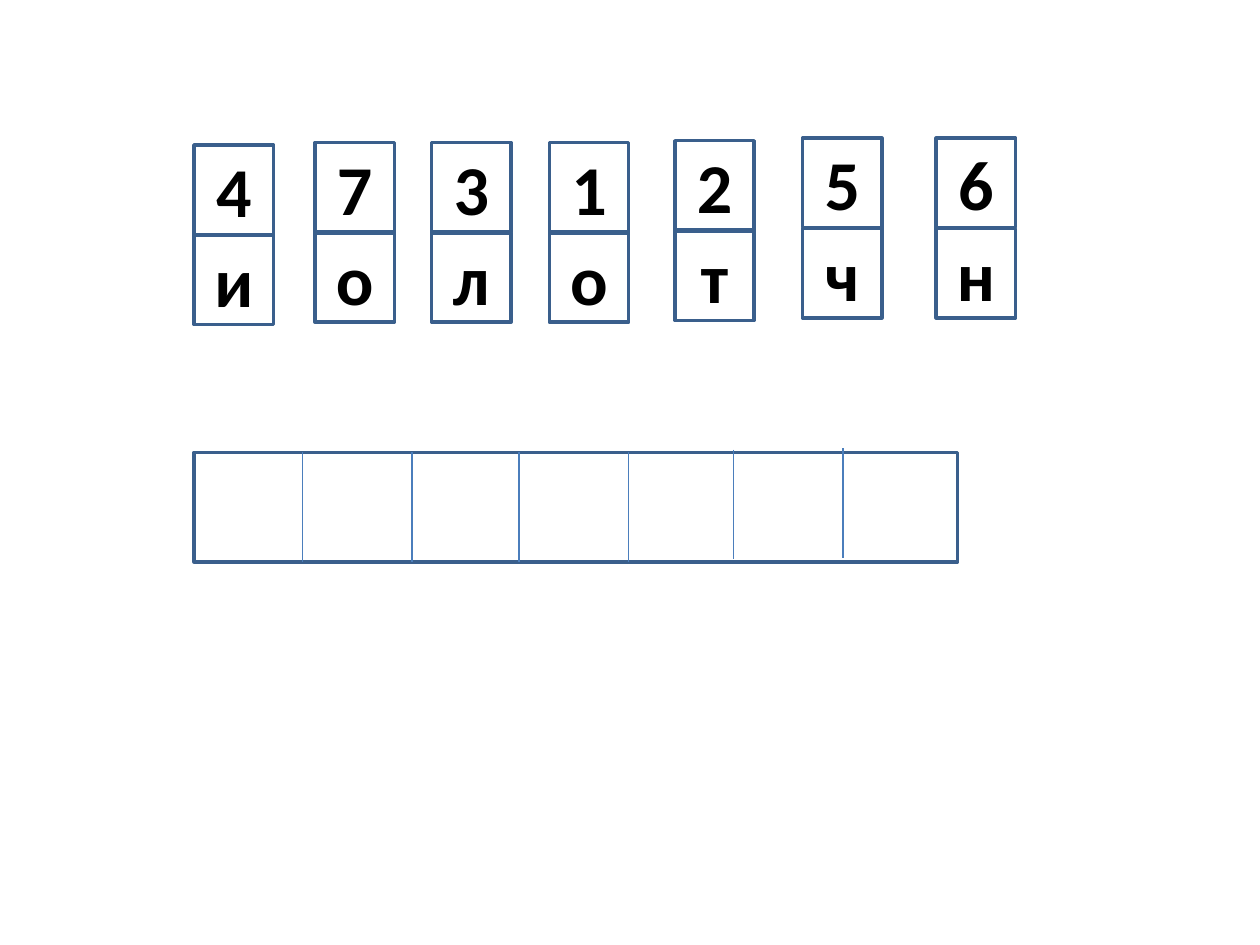
from lxml import etree
from pptx import Presentation, util as u
from pptx.dml.color import RGBColor
from pptx.enum import shapes, text
from pptx.oxml import ns

WHITE = RGBColor(0xFF, 0xFF, 0xFF)
BLACK = RGBColor(0, 0, 0)
NAVY = RGBColor(0x3A, 0x5F, 0x8C)
BLUE = RGBColor(0x4B, 0x7E, 0xBC)

TILE_WIDTH, TILE_HEIGHT, ROW_STEP = 45.4, 51.1, 51.6
STRIP_LEFT, STRIP_TOP, STRIP_WIDTH, STRIP_HEIGHT = 110.9, 258.5, 436.3, 62.6

CARDS = [
    ("4", "и", 110.9, 82.8),
    ("7", "о", 180, 81.4),
    ("3", "л", 246.6, 81.4),
    ("1", "о", 313.9, 81.4),
    ("2", "т", 385.6, 80.4),
    ("5", "ч", 458.6, 79),
    ("6", "н", 535, 79),
]
DIVIDERS = [
    (172.8, STRIP_TOP),
    (235.4, STRIP_TOP),
    (296.6, STRIP_TOP),
    (359.3, STRIP_TOP),
    (419, 257),
    (481.7, 256.2),
]


class Puzzle:
    font_name = "Calibri"
    font_size = u.Pt(40)
    border_width = u.Pt(2)
    divider_width = u.Pt(0.75)

    def __init__(self, slide):
        self.slide = slide

    def box(self, left, top, width, height):
        box = self.slide.shapes.add_shape(
            shapes.MSO_SHAPE.RECTANGLE,
            u.Pt(left), u.Pt(top), u.Pt(width), u.Pt(height))
        box.shadow.inherit = False
        box.fill.solid()
        box.fill.fore_color.rgb = WHITE
        box.line.color.rgb = NAVY
        box.line.width = self.border_width
        return box

    def tile(self, symbol, left, top):
        frame = self.box(left, top, TILE_WIDTH, TILE_HEIGHT).text_frame
        frame.vertical_anchor = text.MSO_ANCHOR.MIDDLE
        paragraph = frame.paragraphs[0]
        paragraph.text = symbol
        paragraph.alignment = text.PP_ALIGN.CENTER
        font = paragraph.font
        font.name = self.font_name
        font.size = self.font_size
        font.bold = True
        font.color.rgb = BLACK

    def divider(self, x, top):
        divider = self.slide.shapes.add_connector(
            shapes.MSO_CONNECTOR.STRAIGHT,
            u.Pt(x), u.Pt(top), u.Pt(x), u.Pt(top + STRIP_HEIGHT))
        divider.line.color.rgb = BLUE
        divider.line.width = self.divider_width
        etree.SubElement(divider._element.spPr, ns.qn("a:effectLst"))


def main():
    deck = Presentation()
    deck.slide_width, deck.slide_height = u.Pt(720), u.Pt(540)
    puzzle = Puzzle(deck.slides.add_slide(deck.slide_layouts[6]))

    puzzle.box(STRIP_LEFT, STRIP_TOP, STRIP_WIDTH, STRIP_HEIGHT)
    for number, letter, left, top in CARDS:
        puzzle.tile(number, left, top)
        puzzle.tile(letter, left, top + ROW_STEP)
    for x, top in DIVIDERS:
        puzzle.divider(x, top)

    deck.save("out.pptx")


if __name__ == "__main__":
    main()
